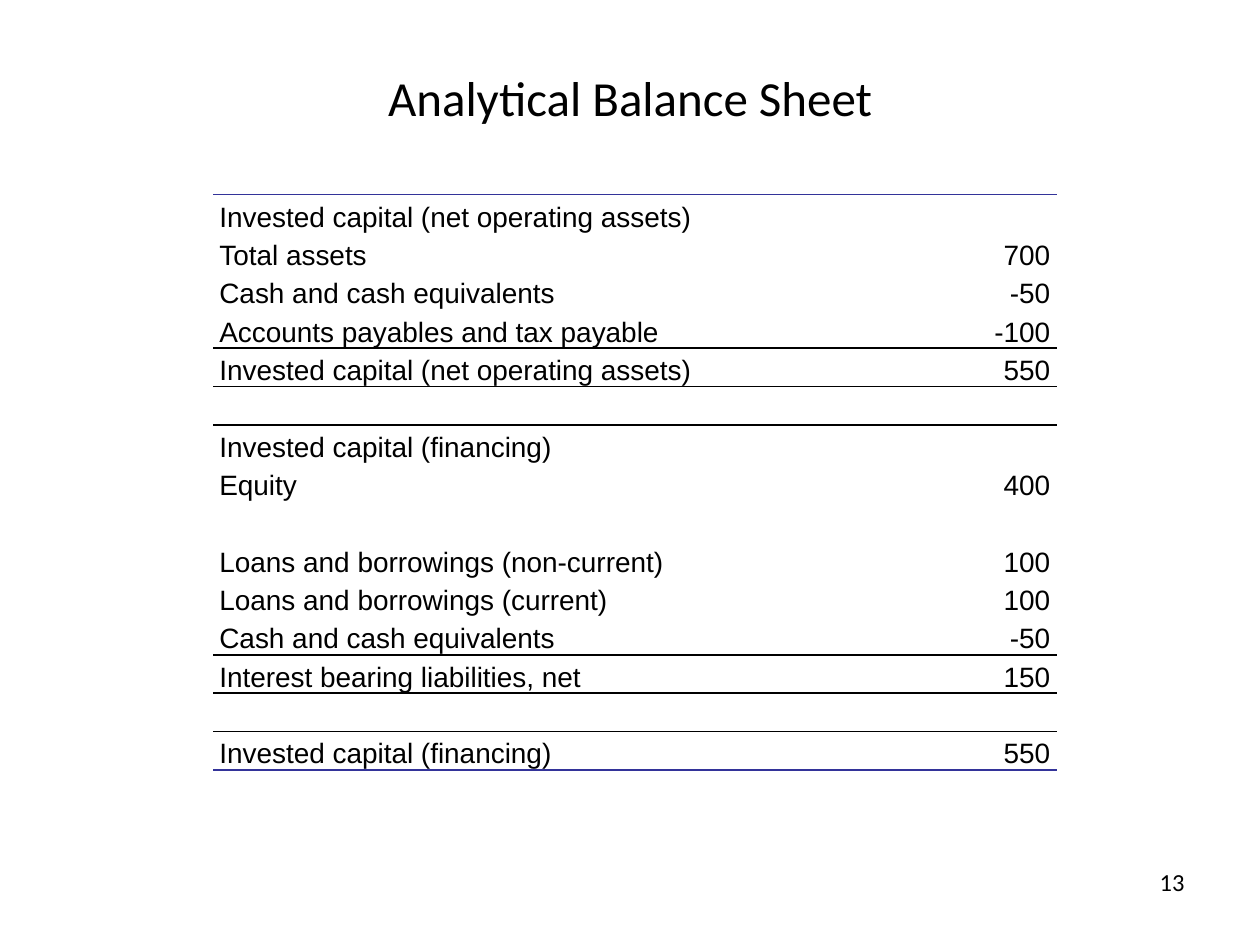
from lxml.etree import SubElement
from pptx import Presentation
from pptx.dml.color import RGBColor
from pptx.enum.text import MSO_ANCHOR, PP_ALIGN
from pptx.oxml.ns import qn
from pptx.util import Pt

BLACK, BLUE = "000000", "333399"
ROWS = [
    ("Invested capital (net operating assets)", ""),
    ("Total assets", "700"),
    ("Cash and cash equivalents", "-50"),
    ("Accounts payables and tax payable", "-100"),
    ("Invested capital (net operating assets)", "550"),
    ("", ""),
    ("Invested capital (financing)", ""),
    ("Equity", "400"),
    ("", ""),
    ("Loans and borrowings (non-current)", "100"),
    ("Loans and borrowings (current)", "100"),
    ("Cash and cash equivalents", "-50"),
    ("Interest bearing liabilities, net", "150"),
    ("", ""),
    ("Invested capital (financing)", "550"),
]
# Row number: the rules on its top (lnT) and bottom (lnB) edges
RULES = {
    0: [("lnT", BLUE)],
    3: [("lnB", BLACK)],
    4: [("lnT", BLACK), ("lnB", BLACK)],
    5: [("lnT", BLACK)],
    11: [("lnB", BLACK)],
    12: [("lnT", BLACK), ("lnB", BLACK)],
    13: [("lnT", BLACK)],
    14: [("lnB", BLUE)],
}


def style(para, name, size, align):
    para.alignment = align
    para.font.name = name
    para.font.size = Pt(size)
    para.font.bold = False
    para.font.color.rgb = RGBColor.from_string(BLACK)


def rule(cell, edge, color):
    """Draw a 1 pt line on one edge of a cell."""
    props = cell._tc.get_or_add_tcPr()
    line = SubElement(props, qn("a:" + edge), w=str(Pt(1)))
    fill = SubElement(line, qn("a:solidFill"))
    SubElement(fill, qn("a:srgbClr"), val=color)


deck = Presentation()
deck.slide_width, deck.slide_height = Pt(720), Pt(540)
slide = deck.slides.add_slide(deck.slide_layouts[5])

title = slide.shapes.title
title.left, title.top, title.width, title.height = Pt(36), Pt(21.6), Pt(648), Pt(67)
title.text_frame.text = "Analytical Balance Sheet"
title.text_frame.vertical_anchor = MSO_ANCHOR.MIDDLE
style(title.text_frame.paragraphs[0], "Calibri", 28, PP_ALIGN.CENTER)

page = slide.shapes.add_textbox(Pt(516), Pt(492), Pt(168), Pt(37.5)).text_frame
page.word_wrap = True
page.text = "13"
style(page.paragraphs[0], "Calibri", 14, PP_ALIGN.RIGHT)

frame = slide.shapes.add_table(len(ROWS), 2, Pt(121.75), Pt(111.25), Pt(482), Pt(329))
table = frame.table
table.first_row = table.horz_banding = False
# Built-in style "No Style, No Grid"
table._tbl.tblPr.find(qn("a:tableStyleId")).text = "{2D5ABB26-0587-4C30-8999-92F81FD0307C}"
table.columns[0].width, table.columns[1].width = Pt(398.5), Pt(83.5)

for r, texts in enumerate(ROWS):
    table.rows[r].height = Pt(21.93)
    for c, text in enumerate(texts):
        cell = table.cell(r, c)
        cell.text = text
        cell.margin_left = cell.margin_right = Pt(3.6)
        cell.margin_top = cell.margin_bottom = 0
        cell.vertical_anchor = MSO_ANCHOR.BOTTOM
        style(cell.text_frame.paragraphs[0], "Arial", 16, PP_ALIGN.RIGHT if c else PP_ALIGN.LEFT)
        for edge, color in RULES.get(r, []):
            rule(cell, edge, color)
        cell.fill.background()

deck.save("out.pptx")
